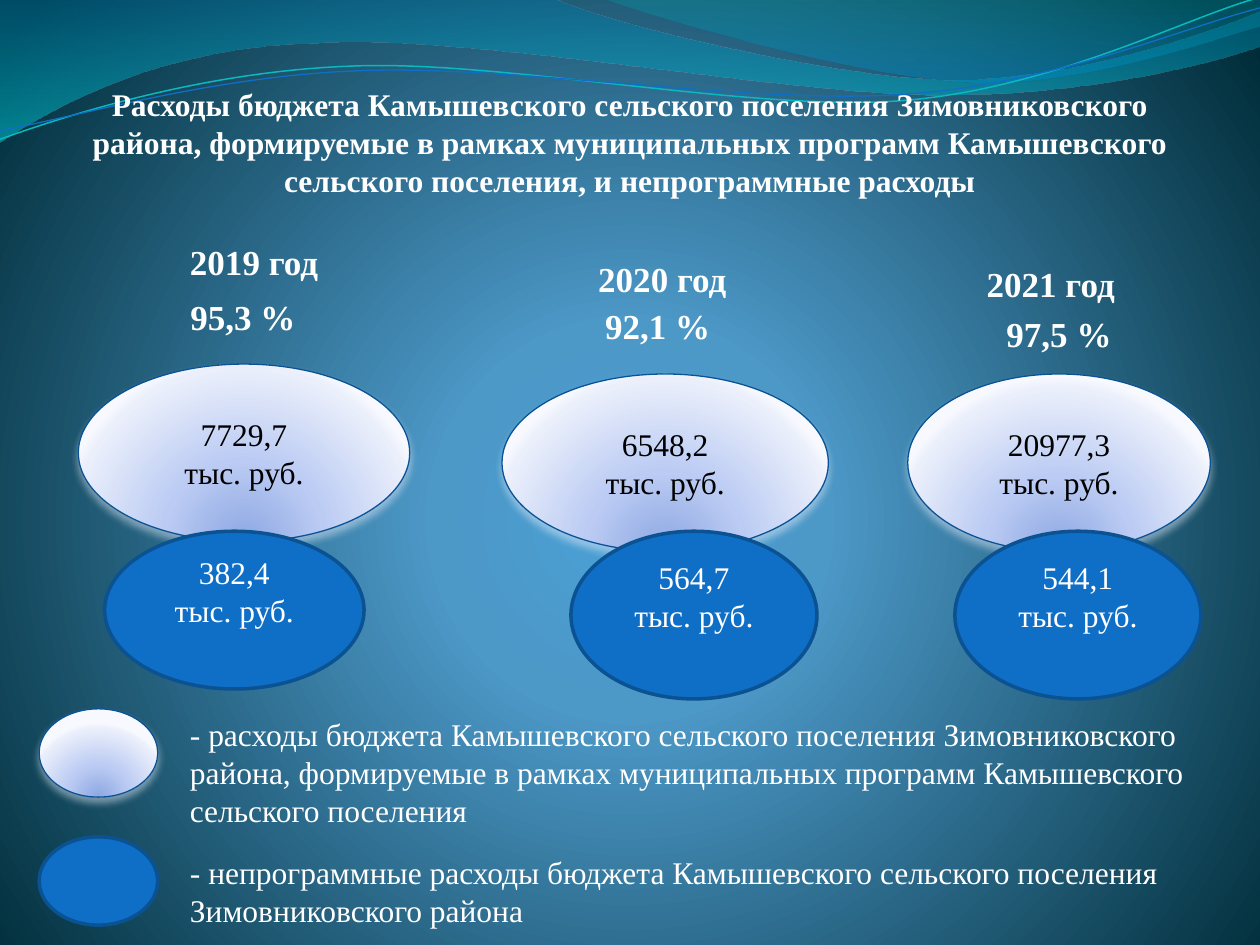
"""Build the slide on programme and non-programme budget spending."""
from lxml import etree
from pptx import Presentation
from pptx.dml.color import RGBColor
from pptx.enum import shapes, text
from pptx.oxml import ns
from pptx.util import Cm, Pt

FONT = "Times New Roman"
WHITE, BLACK, BLUE = "FFFFFF", "000000", "0F6FC6"
BACKGROUND = [(0, "4AA0D6", 100), (25, "4C98C7", 100), (100, "002C38", 100)]
PEARL = [(0, "8DA8E3", 100), (43, "BBCBF3", 100), (93, "EAEFFB", 100), (100, "F7F9FF", 100)]
UNIT = "тыс. руб."
TITLE = ("Расходы бюджета Камышевского сельского поселения Зимовниковского района, "
         "формируемые в рамках муниципальных программ Камышевского сельского поселения, "
         "и непрограммные расходы")
YEARS = [
    dict(year="2019 год", year_at=(3.58, 4.72), share="95,3 %", share_at=(3.02, 5.84),
         programme="7729,7", programme_box=(1.58, 7.34, 6.68, 3.58),
         other="382,4", other_box=(2.11, 10.71, 5.23, 3.18)),
    dict(year="2020 год", year_at=(11.81, 5.06), share="92,1 %", share_at=(11.38, 6.02),
         programme="6548,2", programme_box=(10.12, 7.54, 6.58, 3.58),
         other="564,7", other_box=(11.51, 10.71, 4.96, 3.38)),
    dict(year="2021 год", year_at=(19.64, 5.16), share="97,5 %", share_at=(19.47, 6.17),
         programme="20977,3", programme_box=(18.3, 7.54, 6.1, 3.58),
         other="544,1", other_box=(19.25, 10.71, 4.96, 3.38)),
]
LEGEND = [
    ("programme", 14.29, (3.58, 14.29, 20.62, 2.57),
     "- расходы бюджета Камышевского сельского поселения Зимовниковского района, "
     "формируемые в рамках муниципальных программ Камышевского сельского поселения"),
    ("other", 16.87, (3.58, 17.07, 20.62, 1.8),
     "- непрограммные расходы бюджета Камышевского сельского поселения "
     "Зимовниковского района"),
]
BANDS = [
    ([(0, "0074A1", 45), (100, "00C6CF", 55)], (0, 0), [
        [(11.18, -0.03)],
        [(12.09, 0.43), (16.87, 1.6), (19.25, 1.6)],
        [(21.67, 1.6), (24.33, 0.66), (25.4, 0.23)],
        [(25.43, 0.91)],
        [(24.97, 1.12), (22.1, 1.93), (18.95, 1.91)],
        [(15.75, 1.91), (9.7, 0.71), (6.53, 0.86)],
        [(3.25, 0.91), (1.17, 2.11), (-0.03, 2.87)],
        [(0, 0)]]),
    ([(0, "00A1A9", 30), (80, "008BBF", 45)], (12.17, -0.03), [
        [(12.93, 0.28), (17.32, 1.57), (19.53, 1.65)],
        [(21.74, 1.75), (24.41, 0.81), (25.4, 0.53)],
        [(25.4, 0)],
        [(12.17, -0.03)]]),
]
STRAND_TILT = -2.7
STRANDS = [
    ("0AB8BF", 0.85, (-0.05, 2.21), [
        [(1.19, 1.83), (4.01, 1.04), (7.06, 1.07)],
        [(10.06, 1.07), (15.01, 2.36), (18.08, 2.29)],
        [(21.13, 2.21), (23.88, 0.91), (25.4, 0.56)]]),
    (BLUE, 0.75, (-0.05, 2.03), [
        [(1.17, 1.91), (4.17, 1.14), (7.19, 1.17)],
        [(10.24, 1.17), (15.14, 2.24), (18.19, 2.16)],
        [(21.21, 2.11), (23.93, 1.07), (25.45, 0.76)]]),
]


def rgb(value):
    return RGBColor.from_string(value)


def add(parent, tag, **attributes):
    return etree.SubElement(parent, ns.qn(tag), {k: str(v) for k, v in attributes.items()})


def add_color(parent, value, opacity):
    add(add(parent, "a:srgbClr", val=value), "a:alpha", val=opacity * 1000)


def set_gradient(holder, stops, focus=None):
    """Replace the holder's solid fill by a gradient, radial if a focus is given."""
    gradient = etree.Element(ns.qn("a:gradFill"), rotWithShape="1")
    stop_list = add(gradient, "a:gsLst")
    for position, value, opacity in stops:
        add_color(add(stop_list, "a:gs", pos=position * 1000), value, opacity)
    if focus:
        edges = {side: share * 1000 for side, share in zip("ltrb", focus)}
        add(add(gradient, "a:path", path="circle"), "a:fillToRect", **edges)
    else:
        add(gradient, "a:lin", ang=90 * 60000, scaled=1)
    holder.replace(holder.find(ns.qn("a:solidFill")), gradient)


def write(frame, lines, size=18, color=WHITE, bold=False, align=text.PP_ALIGN.CENTER,
          anchor=text.MSO_ANCHOR.TOP):
    frame.word_wrap = True
    frame.vertical_anchor = anchor
    for index, line in enumerate(lines):
        paragraph = frame.add_paragraph() if index else frame.paragraphs[0]
        paragraph.alignment = align
        run = paragraph.add_run()
        run.text = line
        run.font.name, run.font.size, run.font.bold = FONT, Pt(size), bold
        run.font.color.rgb = rgb(color)


def add_label(slide, box, line, **style):
    label = slide.shapes.add_textbox(*map(Cm, box))
    write(label.text_frame, [line], **style)
    label.text_frame.auto_size = text.MSO_AUTO_SIZE.SHAPE_TO_FIT_TEXT


def add_oval(slide, kind, box, lines=()):
    oval = slide.shapes.add_shape(shapes.MSO_SHAPE.OVAL, *map(Cm, box))
    oval.shadow.inherit = False
    oval.fill.solid()
    oval.fill.fore_color.rgb = rgb(BLUE)
    programme = kind == "programme"
    oval.line.color.rgb = rgb("095295" if programme else "0B5292")
    oval.line.width = Pt(0.75 if programme else 2)
    if programme:
        properties = oval._element.spPr
        set_gradient(properties, PEARL, (50, 130, 50, -30))
        glow = add(properties.find(ns.qn("a:effectLst")), "a:outerShdw", blurRad=Pt(4.5),
                   dist=Pt(3), dir=90 * 60000, algn="ctr", rotWithShape=0)
        add_color(glow, "EAEFFB", 48)
    elif lines:
        oval.text_frame.margin_top, oval.text_frame.margin_bottom = 0, Cm(0.76)
    write(oval.text_frame, lines, color=BLACK if programme else WHITE,
          anchor=text.MSO_ANCHOR.MIDDLE)


def add_wave(slide, start, segments, close):
    """Draw an outline whose three-point segments are cubic curves."""
    builder = slide.shapes.build_freeform(*map(Cm, start))
    builder.add_line_segments([tuple(map(Cm, p)) for s in segments for p in s], close=close)
    wave = builder.convert_to_shape()
    wave.shadow.inherit = False
    corners = iter(list(wave._element.iter(ns.qn("a:lnTo"))))
    for segment in segments:
        steps = [next(corners) for _ in segment]
        if len(steps) == 3:
            curve = etree.Element(ns.qn("a:cubicBezTo"))
            steps[0].addprevious(curve)
            for step in steps:
                curve.append(step[0])
                step.getparent().remove(step)
    return wave


def main():
    deck = Presentation()
    deck.slide_width, deck.slide_height = Cm(25.4), Cm(19.05)
    slide = deck.slides.add_slide(deck.slide_layouts[6])
    slide.background.fill.solid()
    slide.background.fill.fore_color.rgb = rgb(BLUE)
    set_gradient(next(slide._element.iter(ns.qn("p:bgPr"))), BACKGROUND, (10, 110, 10, 100))

    for stops, start, segments in BANDS:
        band = add_wave(slide, start, segments, close=True)
        band.fill.solid()
        band.fill.fore_color.rgb = rgb(BLUE)
        set_gradient(band._element.spPr, stops)
        band.line.fill.background()
    for color, width, start, segments in STRANDS:
        strand = add_wave(slide, start, segments, close=False)
        strand.rotation = STRAND_TILT
        strand.fill.background()
        strand.line.color.rgb = rgb(color)
        strand.line.width = Pt(width)

    add_label(slide, (0.99, 1.59, 23.42, 2.57), TITLE, bold=True)
    for column in YEARS:
        add_label(slide, (*column["year_at"], 3.76, 1.12), column["year"], size=20, bold=True,
                  align=text.PP_ALIGN.LEFT)
        add_label(slide, (*column["share_at"], 3.76, 1.12), column["share"], size=20, bold=True)
        for kind in ("programme", "other"):
            add_oval(slide, kind, column[kind + "_box"], [column[kind], UNIT])
    for kind, top, box, meaning in LEGEND:
        add_oval(slide, kind, (0.79, top, 2.39, 1.78))
        add_label(slide, box, meaning, align=text.PP_ALIGN.LEFT)
    deck.save("out.pptx")


if __name__ == "__main__":
    main()
